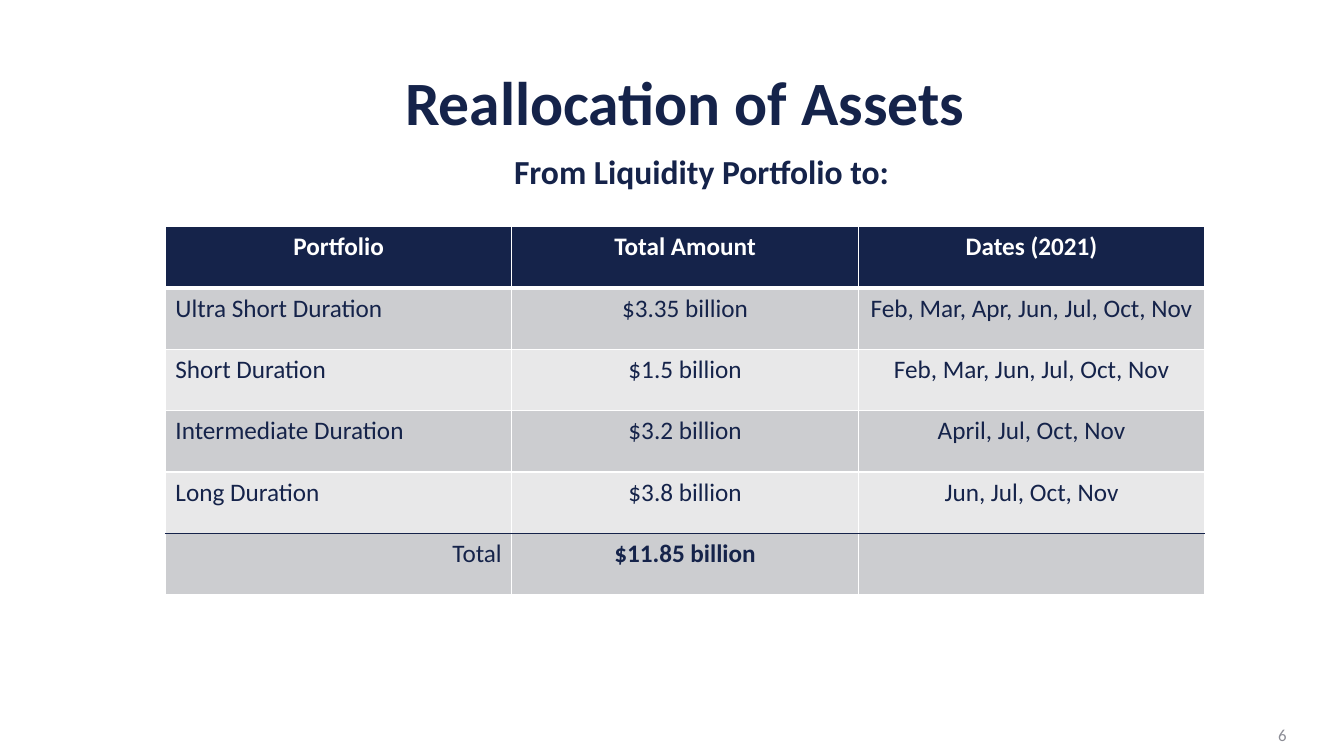
from lxml.etree import SubElement
from pptx import Presentation
from pptx.dml.color import RGBColor
from pptx.enum.text import MSO_ANCHOR, PP_ALIGN
from pptx.oxml.ns import qn
from pptx.util import Inches, Pt

NAVY = RGBColor(0x15, 0x23, 0x4A)
WHITE = RGBColor(0xFF, 0xFF, 0xFF)
DARK_BAND = RGBColor(0xCC, 0xCD, 0xD0)
LIGHT_BAND = RGBColor(0xE8, 0xE8, 0xE9)
PAGE_GRAY = RGBColor(0x8C, 0x8D, 0x96)

REALLOCATIONS = [
    ("Portfolio", "Total Amount", "Dates (2021)"),
    ("Ultra Short Duration", "$3.35 billion", "Feb, Mar, Apr, Jun, Jul, Oct, Nov"),
    ("Short Duration", "$1.5 billion", "Feb, Mar, Jun, Jul, Oct, Nov"),
    ("Intermediate Duration", "$3.2 billion", "April, Jul, Oct, Nov"),
    ("Long Duration", "$3.8 billion", "Jun, Jul, Oct, Nov"),
    ("Total", "$11.85 billion", ""),
]


def write(frame, text, size=18, color=NAVY, bold=False, align=PP_ALIGN.CENTER):
    paragraph = frame.paragraphs[0]
    paragraph.alignment = align
    paragraph.font.size = Pt(size)
    if text:
        run = paragraph.add_run()
        run.text = text
        run.font.name = "Calibri"
        run.font.size = Pt(size)
        run.font.bold = bold
        run.font.color.rgb = color
    return paragraph


def set_border(cell, edge, color, width):
    properties = cell._tc.get_or_add_tcPr()
    line = SubElement(properties, qn(f"a:{edge}"), w=str(Pt(width)))
    fill = SubElement(line, qn("a:solidFill"))
    SubElement(fill, qn("a:srgbClr"), val=str(color))


def add_heading(slide, left, top, width, height):
    title = slide.shapes.title
    title.left, title.top, title.width, title.height = left, top, width, height
    title.text_frame.vertical_anchor = MSO_ANCHOR.MIDDLE
    write(title.text_frame, "Reallocation of Assets", size=44, bold=True).line_spacing = 0.9


def add_label(slide, text, left, top, width, height, anchor=MSO_ANCHOR.TOP, **style):
    label = slide.shapes.add_textbox(left, top, width, height).text_frame
    label.word_wrap = True
    label.vertical_anchor = anchor
    write(label, text, **style)


def add_reallocation_table(slide, left, top, width, height):
    last = len(REALLOCATIONS) - 1
    table = slide.shapes.add_table(
        len(REALLOCATIONS), len(REALLOCATIONS[0]), left, top, width, height
    ).table
    for r, entries in enumerate(REALLOCATIONS):
        for c, entry in enumerate(entries):
            cell = table.cell(r, c)
            header = r == 0
            align = PP_ALIGN.CENTER
            if c == 0 and not header:
                align = PP_ALIGN.RIGHT if r == last else PP_ALIGN.LEFT
            write(cell.text_frame, entry, color=WHITE if header else NAVY,
                  bold=header or (r == last and c == 1), align=align)
            above = (NAVY, 1) if r == last else (WHITE, 3 if r == 1 else 1)
            below = (NAVY, 1) if r == last - 1 else (WHITE, 3 if header else 1)
            set_border(cell, "lnL", WHITE, 1)
            set_border(cell, "lnR", WHITE, 1)
            set_border(cell, "lnT", *above)
            set_border(cell, "lnB", *below)
            cell.fill.solid()
            cell.fill.fore_color.rgb = NAVY if header else DARK_BAND if r % 2 else LIGHT_BAND


def build_reallocation_slide(deck):
    slide = deck.slides.add_slide(deck.slide_layouts[5])
    add_heading(slide, Inches(1.46), Inches(0.67), Inches(10.67), Inches(0.75))
    add_label(slide, "6", Inches(9.86), Inches(7.09), Inches(3), Inches(0.4),
              anchor=MSO_ANCHOR.MIDDLE, size=12, color=PAGE_GRAY, align=PP_ALIGN.RIGHT)
    add_reallocation_table(slide, Inches(1.64), Inches(2.25), Inches(10.31), Inches(3.65))
    add_label(slide, "From Liquidity Portfolio to:", Inches(5), Inches(1.45),
              Inches(3.97), Inches(0.5), size=24, bold=True, align=PP_ALIGN.LEFT)


def main():
    deck = Presentation()
    deck.slide_width, deck.slide_height = Inches(13.33), Inches(7.5)
    build_reallocation_slide(deck)
    deck.save("out.pptx")


if __name__ == "__main__":
    main()
